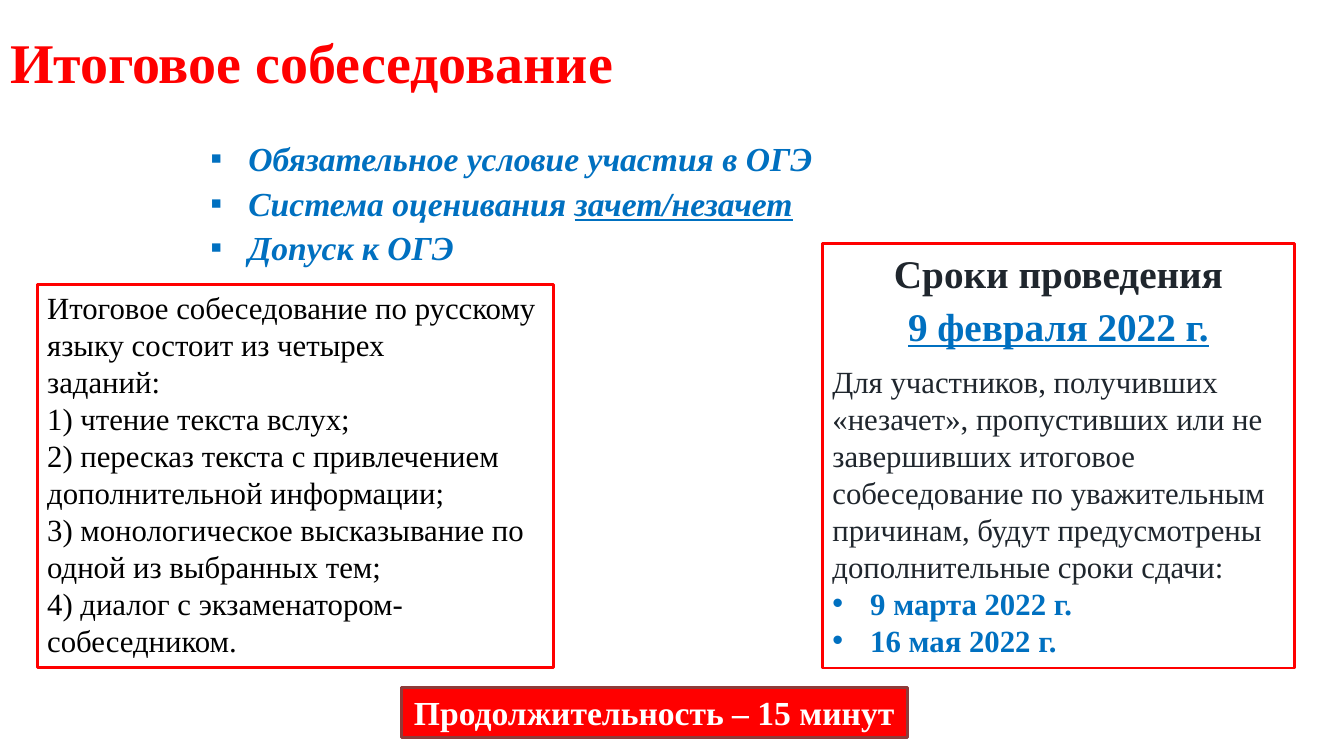
from lxml import etree
from pptx import Presentation
from pptx.dml.color import RGBColor
from pptx.enum.shapes import MSO_SHAPE
from pptx.enum.text import MSO_ANCHOR, MSO_AUTO_SIZE, PP_ALIGN
from pptx.oxml.ns import qn
from pptx.util import Pt

RECTANGLE = MSO_SHAPE.RECTANGLE
TOP, MIDDLE = MSO_ANCHOR.TOP, MSO_ANCHOR.MIDDLE
LEFT, CENTER = PP_ALIGN.LEFT, PP_ALIGN.CENTER
FIT_SHAPE, NO_FIT = MSO_AUTO_SIZE.SHAPE_TO_FIT_TEXT, MSO_AUTO_SIZE.NONE

FONT = "Times New Roman"
RED, BLUE, DARK, BLACK, WHITE = "FF0000", "0070C0", "1F262D", "000000", "FFFFFF"
MAROON = "8E3B39"
BULLET_INDENT = 27

# Boxes: left, top, width, height in points
TITLE_BOX = (0, 1.5, 960, 84)
POINTS_BOX = (143.3, 89.3, 648, 110.9)
DATES_BOX = (587.5, 174.2, 337, 303)
TASKS_BOX = (26.6, 203, 368.6, 273.8)
DURATION_BOX = (286.6, 491, 361.4, 36)

TASKS = [
    "Итоговое собеседование по русскому языку состоит из четырех",
    "заданий:",
    "1) чтение текста вслух;",
    "2) пересказ текста с привлечением",
    "дополнительной информации;",
    "3) монологическое высказывание по одной из выбранных тем;",
    "4) диалог с экзаменатором-",
    "собеседником.",
]
RETAKE_NOTE = [
    "Для участников, получивших",
    "«незачет», пропустивших или не",
    "завершивших итоговое",
    "собеседование по уважительным",
    "причинам, будут предусмотрены",
    "дополнительные сроки сдачи:",
]
RETAKE_DATES = ["9 марта 2022 г.", "16 мая 2022 г."]


def color(value):
    return RGBColor.from_string(value)


def apply(target, values):
    for name, value in values.items():
        setattr(target, name, value)


def place(shape, box):
    names = ("left", "top", "width", "height")
    apply(shape, {name: Pt(value) for name, value in zip(names, box)})


def add_span(para, text, size, hue, **styles):
    span = para.add_run()
    span.text = text
    apply(span.font, {"name": FONT, "size": Pt(size), **styles})
    span.font.color.rgb = color(hue)


def add_para(frame, align=LEFT, before=0, bullet=None):
    first = frame.paragraphs[0]
    para = frame.add_paragraph() if first.runs else first
    apply(para, {"alignment": align, "space_before": Pt(before)})
    if bullet:
        properties = para._p.get_or_add_pPr()
        properties.set("marL", str(Pt(BULLET_INDENT)))
        properties.set("indent", str(-Pt(BULLET_INDENT)))
        etree.SubElement(properties, qn("a:buFont")).set("typeface", "Arial")
        etree.SubElement(properties, qn("a:buChar")).set("char", bullet)
    return para


def add_panel(page, box, fill, line, wrap=True):
    left, top, width, height = (Pt(value) for value in box)
    panel = page.shapes.add_shape(RECTANGLE, left, top, width, height)
    panel.shadow.inherit = False
    panel.fill.solid()
    panel.fill.fore_color.rgb = color(fill)
    panel.line.color.rgb = color(line)
    panel.line.width = Pt(2)
    frame = panel.text_frame
    apply(frame, {"word_wrap": wrap, "vertical_anchor": TOP, "auto_size": FIT_SHAPE})
    return frame


def add_title(page, box):
    title = page.shapes.title
    place(title, box)
    frame = title.text_frame
    apply(frame, {"word_wrap": True, "vertical_anchor": MIDDLE, "auto_size": NO_FIT})
    add_span(add_para(frame), "Итоговое собеседование", 40, RED, bold=True)


def add_points(page, box):
    frame = page.shapes.add_textbox(*(Pt(value) for value in box)).text_frame
    apply(frame, {"word_wrap": True, "vertical_anchor": MIDDLE})
    points = [
        [("Обязательное условие участия в ОГЭ", False)],
        [("Система оценивания ", False), ("зачет/незачет", True)],
        [("Допуск к ОГЭ", False)],
    ]
    for index, spans in enumerate(points):
        para = add_para(frame, before=3 if index else 0, bullet="▪")
        for text, underline in spans:
            add_span(para, text, 24, BLUE, bold=True, italic=True, underline=underline)


def add_dates(page, box):
    frame = add_panel(page, box, WHITE, RED)
    # Main date
    add_span(add_para(frame, CENTER), "Сроки проведения", 28, DARK, bold=True)
    add_span(add_para(frame, CENTER, before=4.8), "9 февраля 2022 г.", 28, BLUE,
             bold=True, underline=True)
    # Extra dates
    for index, text in enumerate(RETAKE_NOTE):
        add_span(add_para(frame, before=0 if index else 9.6), text, 22, DARK)
    for text in RETAKE_DATES:
        add_span(add_para(frame, bullet="•"), text, 22, BLUE, bold=True)


def add_tasks(page, box):
    frame = add_panel(page, box, WHITE, RED)
    for text in TASKS:
        add_span(add_para(frame), text, 22, BLACK)


def add_duration(page, box):
    frame = add_panel(page, box, RED, MAROON, wrap=False)
    add_span(add_para(frame, CENTER), "Продолжительность – 15 минут", 24, WHITE, bold=True)


def main():
    deck = Presentation()
    apply(deck, {"slide_width": Pt(960), "slide_height": Pt(540)})
    page = deck.slides.add_slide(deck.slide_layouts.get_by_name("Title Only"))
    add_title(page, TITLE_BOX)
    add_points(page, POINTS_BOX)
    add_dates(page, DATES_BOX)
    add_tasks(page, TASKS_BOX)
    add_duration(page, DURATION_BOX)
    deck.save("out.pptx")


if __name__ == "__main__":
    main()
